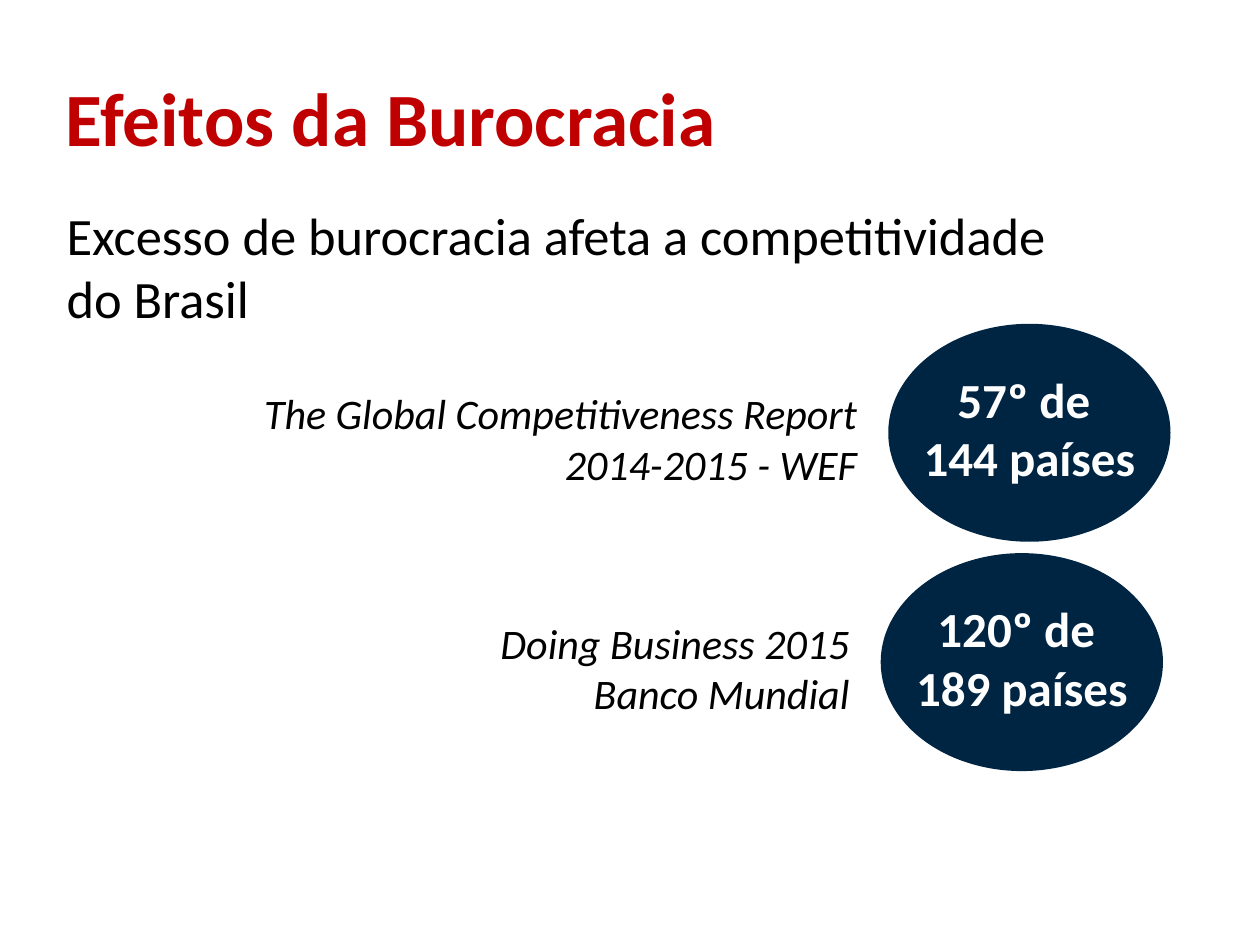
from dataclasses import dataclass

from pptx import Presentation
from pptx.dml.color import RGBColor
from pptx.enum.shapes import MSO_SHAPE
from pptx.enum.text import PP_ALIGN
from pptx.util import Inches, Pt


@dataclass(frozen=True)
class Theme:
    font: str = "Calibri"
    red: RGBColor = RGBColor(0xC0, 0x00, 0x00)
    navy: RGBColor = RGBColor(0x00, 0x25, 0x43)
    black: RGBColor = RGBColor(0x00, 0x00, 0x00)
    white: RGBColor = RGBColor(0xFF, 0xFF, 0xFF)
    title: Pt = Pt(43)
    body: Pt = Pt(30)
    rank: Pt = Pt(28)
    source: Pt = Pt(24)


theme = Theme()


def add_text(shapes, box, lines, size, color, align=PP_ALIGN.LEFT, bold=False, italic=False):
    """Add a wrapping text box with one paragraph per line."""
    tf = shapes.add_textbox(*[Inches(v) for v in box]).text_frame
    tf.word_wrap = True
    for i, line in enumerate(lines):
        p = tf.paragraphs[0] if i == 0 else tf.add_paragraph()
        p.alignment = align
        r = p.add_run()
        r.text = line
        r.font.name = theme.font
        r.font.size = size
        r.font.color.rgb = color
        r.font.bold = bold
        r.font.italic = italic


prs = Presentation()
prs.slide_width, prs.slide_height = Inches(10), Inches(7.5)
s = prs.slides.add_slide(prs.slide_layouts[6])

add_text(s.shapes, (0.43, 1.56, 8.27, 1.41),
         ["Excesso de burocracia afeta a competitividade do Brasil"],
         theme.body, theme.black)
add_text(s.shapes, (-0.67, 0.52, 7.54, 0.71), ["Efeitos da Burocracia"],
         theme.title, theme.red, PP_ALIGN.CENTER, bold=True)

# Each ranking: oval left and top, source text width, source, rank lines
rankings = [
    (7.05, 2.57, 5.02, "The Global Competitiveness Report 2014-2015 - WEF",
     ["57º de ", "144 países"]),
    (6.99, 4.39, 3.65, "Doing Business 2015 Banco Mundial",
     ["120º de ", "189 países"]),
]
oval_w, oval_h = 2.24, 1.73
rank_w = 5

for left, top, source_w, source, rank in rankings:
    group = s.shapes.add_group_shape().shapes
    sp = group.add_shape(MSO_SHAPE.OVAL, Inches(left), Inches(top),
                         Inches(oval_w), Inches(oval_h))
    sp.shadow.inherit = False
    sp.fill.solid()
    sp.fill.fore_color.rgb = theme.navy
    sp.line.fill.background()
    add_text(group, (left - 0.15 - source_w, top + 0.46, source_w, 0.91), [source],
             theme.source, theme.black, PP_ALIGN.RIGHT, italic=True)
    add_text(group, (left + (oval_w - rank_w) / 2, top + 0.31, rank_w, 1.04), rank,
             theme.rank, theme.white, PP_ALIGN.CENTER, bold=True)

prs.save("out.pptx")
